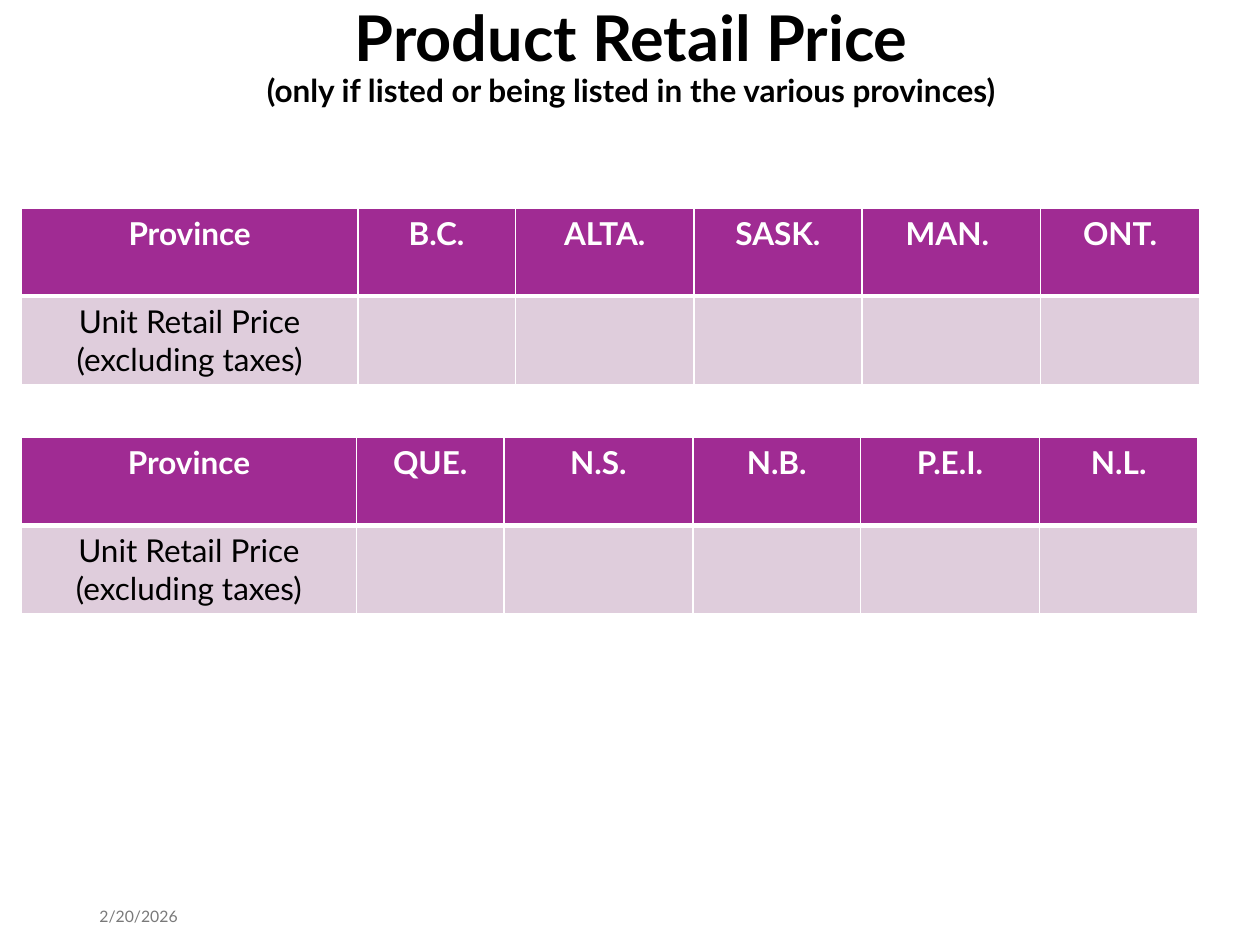
from dataclasses import dataclass

from lxml import etree
from pptx import Presentation
from pptx.dml.color import RGBColor
from pptx.enum.text import MSO_ANCHOR, PP_ALIGN
from pptx.oxml.ns import qn
from pptx.util import Inches, Pt

CENTER, LEFT = PP_ALIGN.CENTER, PP_ALIGN.LEFT
MIDDLE = MSO_ANCHOR.MIDDLE


@dataclass(frozen=True)
class Theme:
    font: str = "Lato"
    ink: str = "000000"
    paper: str = "FFFFFF"
    head: str = "A02B93"
    body: str = "DFCDDC"
    muted: str = "797979"
    title: int = 36
    text: int = 18
    small: int = 9


THEME = Theme()
ROW = 0.7
LABEL = "Unit Retail Price\n(excluding taxes)"
TABLES = [
    ((0.17, 1.65), ["B.C.", "ALTA.", "SASK.", "MAN. ", "ONT."],
     [2.67, 1.25, 1.42, 1.33, 1.42, 1.26]),
    ((0.17, 3.47), ["QUE.", "N.S.", "N.B.", "P.E.I.", "N.L."],
     [2.66, 1.17, 1.5, 1.33, 1.42, 1.26]),
]


def style(run, size, color, bold=False):
    font = run.font
    font.name, font.size, font.bold = THEME.font, Pt(size), bold
    font.color.rgb = RGBColor.from_string(color)


def add_text(slide, box, text, align):
    """Add a wrapped, middle-anchored text box and return its paragraph."""
    frame = slide.shapes.add_textbox(*map(Inches, box)).text_frame
    frame.word_wrap = True
    frame.vertical_anchor = MIDDLE
    para = frame.paragraphs[0]
    para.text = text
    para.alignment = align
    return para


def add_title(slide, box):
    para = add_text(slide, box, "Product Retail Price\v"
                    "(only if listed or being listed in the various provinces)",
                    CENTER)
    para.line_spacing = 0.9
    for run, size in zip(para.runs, (THEME.title, THEME.text)):
        style(run, size, THEME.ink, True)


def add_date(slide, box):
    para = add_text(slide, box, "2/20/2026", LEFT)
    style(para.runs[0], THEME.small, THEME.muted)


def add_edges(cell, top, bottom):
    """Draw the cell borders; top and bottom are widths in points."""
    props = cell._tc.get_or_add_tcPr()
    for side, width in zip("LRTB", (1, 1, top, bottom)):
        line = etree.SubElement(props, qn(f"a:ln{side}"), w=str(Pt(width)))
        fill = etree.SubElement(line, qn("a:solidFill"))
        etree.SubElement(fill, qn("a:srgbClr"), val=THEME.paper)


def fill_cell(cell, text, is_head):
    add_edges(cell, 1 if is_head else 3, 3 if is_head else 1)
    cell.fill.solid()
    cell.fill.fore_color.rgb = RGBColor.from_string(
        THEME.head if is_head else THEME.body)
    cell.text_frame.text = text
    for para in cell.text_frame.paragraphs:
        para.alignment = CENTER
        for run in para.runs:
            style(run, THEME.text, THEME.paper if is_head else THEME.ink,
                  is_head)


def add_prices(slide, spot, names, widths):
    rows = [["Province", *names], [LABEL] + [""] * len(names)]
    box = (*spot, sum(widths), ROW * len(rows))
    table = slide.shapes.add_table(len(rows), len(widths),
                                   *map(Inches, box)).table
    for col, width in zip(table.columns, widths):
        col.width = Inches(width)
    for i, row in enumerate(rows):
        table.rows[i].height = Inches(ROW)
        for j, text in enumerate(row):
            fill_cell(table.cell(i, j), text, i == 0)


def main():
    deck = Presentation()
    deck.slide_width, deck.slide_height = Inches(10), Inches(7.5)
    slide = deck.slides.add_slide(deck.slide_layouts[6])
    add_title(slide, (0.51, 0.13, 9, 0.67))
    for spot, names, widths in TABLES:
        add_prices(slide, spot, names, widths)
    add_date(slide, (0.69, 7.2, 2.25, 0.15))
    deck.save("out.pptx")


if __name__ == "__main__":
    main()
